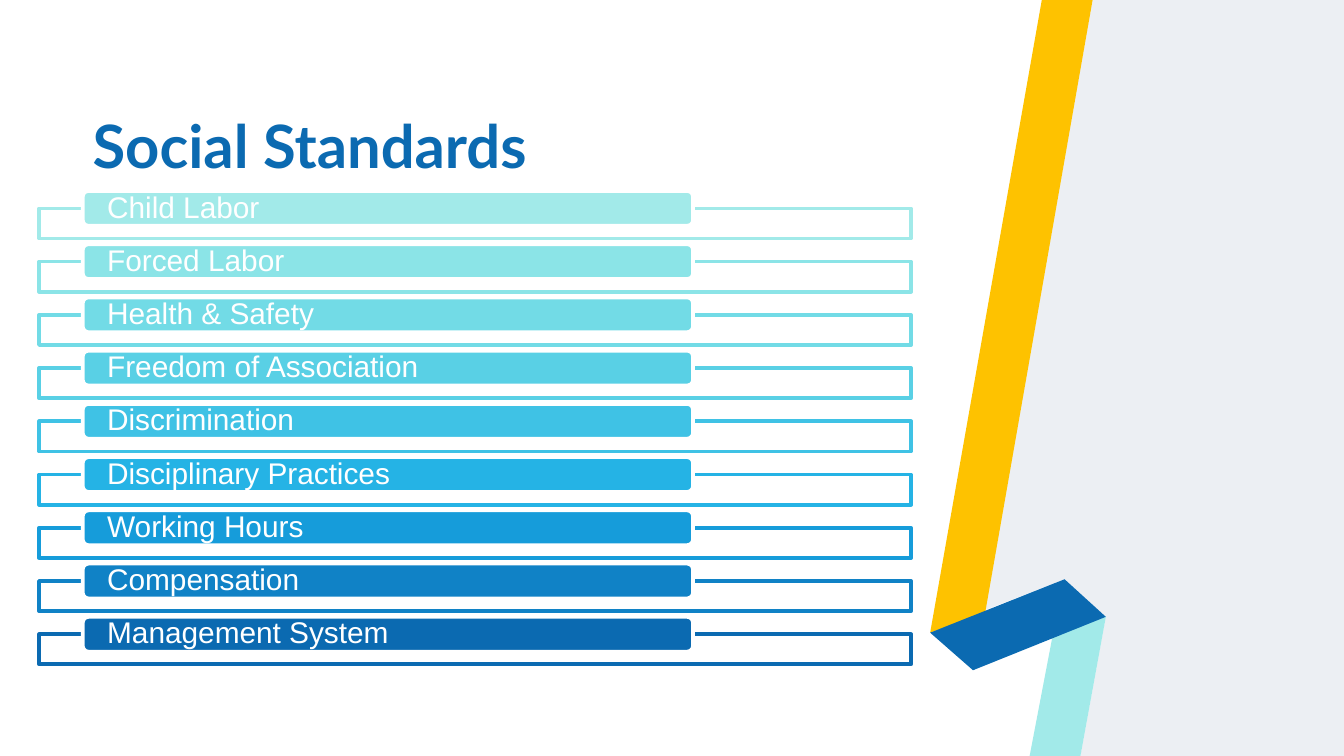
from dataclasses import dataclass

from lxml import etree
from pptx import Presentation
from pptx.dml.color import RGBColor
from pptx.enum.shapes import MSO_SHAPE
from pptx.enum.text import MSO_ANCHOR, PP_ALIGN
from pptx.oxml.ns import qn
from pptx.util import Cm, Pt

RECTANGLE = MSO_SHAPE.RECTANGLE
ROUNDED = MSO_SHAPE.ROUNDED_RECTANGLE
LEFT = PP_ALIGN.LEFT
MIDDLE = MSO_ANCHOR.MIDDLE
BOTTOM = MSO_ANCHOR.BOTTOM


@dataclass(frozen=True)
class Theme:
    white: str = "FFFFFF"
    panel: str = "ECEFF3"
    gold: str = "FEC200"
    aqua: str = "A2EAE9"
    blue: str = "0B6AB1"
    title_font: str = "Lato"
    body_font: str = "Arial"
    title_size: int = 32
    body_size: int = 16
    line_width: int = 2


THEME = Theme()
PAGE_WIDTH, PAGE_HEIGHT = 25.4, 14.29

STANDARDS = [
    ("Child Labor", THEME.aqua),
    ("Forced Labor", "8BE4E7"),
    ("Health & Safety", "72DBE6"),
    ("Freedom of Association", "59D0E5"),
    ("Discrimination", "3FC2E5"),
    ("Disciplinary Practices", "25B3E5"),
    ("Working Hours", "169CDA"),
    ("Compensation", "1082C6"),
    ("Management System", THEME.blue),
]


@dataclass(frozen=True)
class Box:
    """A region of the page, in centimetres."""
    left: float
    top: float
    width: float
    height: float

    def lengths(self):
        return Cm(self.left), Cm(self.top), Cm(self.width), Cm(self.height)


def paint(shape, fill, line=None):
    shape.shadow.inherit = False
    shape.fill.solid()
    shape.fill.fore_color.rgb = RGBColor.from_string(fill)
    if line:
        shape.line.color.rgb = RGBColor.from_string(line)
        shape.line.width = Pt(THEME.line_width)
    else:
        shape.line.fill.background()


def set_opacity(shape, percent):
    color = shape.fill._xPr.find(qn("a:solidFill"))[0]
    etree.SubElement(color, qn("a:alpha")).set("val", str(percent * 1000))


def write(shape, text, font, size, color, anchor, spacing, inset=0, bold=False):
    frame = shape.text_frame
    frame.word_wrap = True
    frame.vertical_anchor = anchor
    frame.margin_left = frame.margin_right = Cm(inset)
    frame.margin_top = frame.margin_bottom = 0
    para = frame.paragraphs[0]
    para.alignment = LEFT
    para.line_spacing = spacing
    span = para.add_run()
    span.text = text
    span.font.name = font
    span.font.size = Pt(size)
    span.font.bold = bold
    span.font.color.rgb = RGBColor.from_string(color)


def add_ribbon(page, box):
    """Grey side panel with a folded ribbon along its left edge."""
    right, bottom = box.width, box.height
    fold_left, fold_top = (0, 11.96), (2.54, 10.95)
    fold_right, fold_bottom = (3.32, 11.66), (0.81, 12.67)
    band_top, tail_end = (3.07, 0), (2.84, bottom)
    pieces = [
        (THEME.panel, [band_top, (1.04, 11.53), fold_top, fold_right,
                       tail_end, (right, bottom), (right, 0)]),
        (THEME.gold, [(2.11, 0), band_top, (1.04, 11.58), fold_left]),
        (THEME.aqua, [(1.88, bottom), (2.31, 12.04), fold_right, tail_end]),
        (THEME.blue, [fold_left, fold_top, fold_right, fold_bottom]),
    ]
    for color, points in pieces:
        corners = [(Cm(box.left + x), Cm(box.top + y)) for x, y in points]
        builder = page.shapes.build_freeform(*corners[0], scale=1.0)
        builder.add_line_segments(corners[1:], close=True)
        paint(builder.convert_to_shape(), color)


def add_title(page, box):
    title = page.shapes.add_textbox(*box.lengths())
    write(title, "Social Standards", THEME.title_font, THEME.title_size,
          THEME.blue, BOTTOM, 0.8, bold=True)


def add_standards(page, box):
    """Evenly spaced rows: an outlined frame with a label pill over its top."""
    row_height, frame_drop, pill_height = 0.9, 0.33, 0.66
    pitch = (box.height - row_height) / (len(STANDARDS) - 1)
    for index, (label, color) in enumerate(STANDARDS):
        top = box.top + index * pitch
        frame_box = Box(box.left, top + frame_drop, box.width, row_height - frame_drop)
        frame = page.shapes.add_shape(RECTANGLE, *frame_box.lengths())
        paint(frame, THEME.white, color)
        set_opacity(frame, 90)

        pill_box = Box(box.left + 0.05 * box.width, top, 0.7 * box.width, pill_height)
        pill = page.shapes.add_shape(ROUNDED, *pill_box.lengths())
        paint(pill, color, THEME.white)
        write(pill, label, THEME.body_font, THEME.body_size,
              THEME.white, MIDDLE, 0.9, inset=0.43)


def main():
    deck = Presentation()
    deck.slide_width, deck.slide_height = Cm(PAGE_WIDTH), Cm(PAGE_HEIGHT)
    page = deck.slides.add_slide(deck.slide_layouts[6])
    add_ribbon(page, Box(17.58, 0, 7.82, PAGE_HEIGHT))
    add_title(page, Box(1.75, 2.31, 14.66, 1.09))
    add_standards(page, Box(0.74, 3.61, 16.48, 8.95))
    deck.save("out.pptx")


if __name__ == "__main__":
    main()
